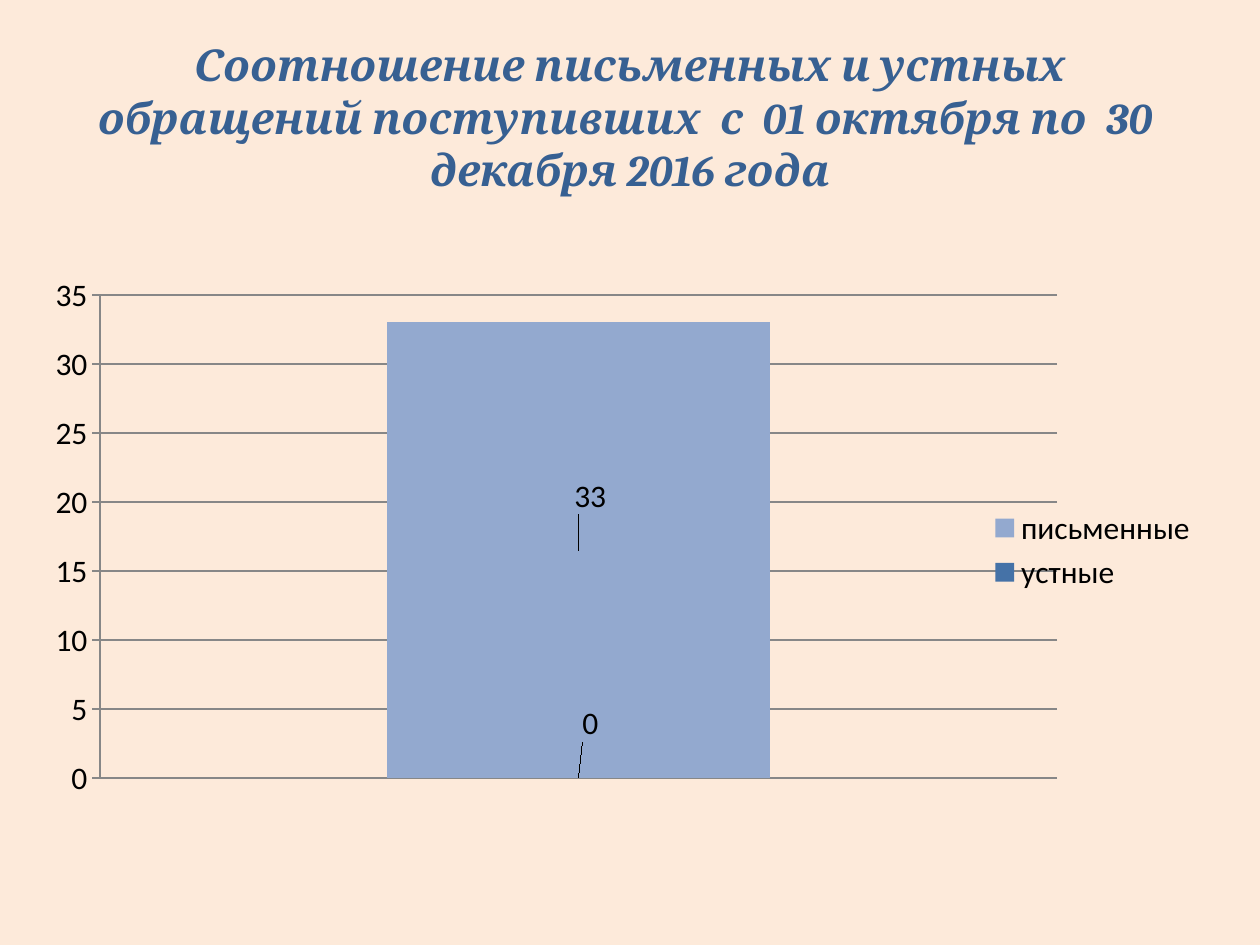
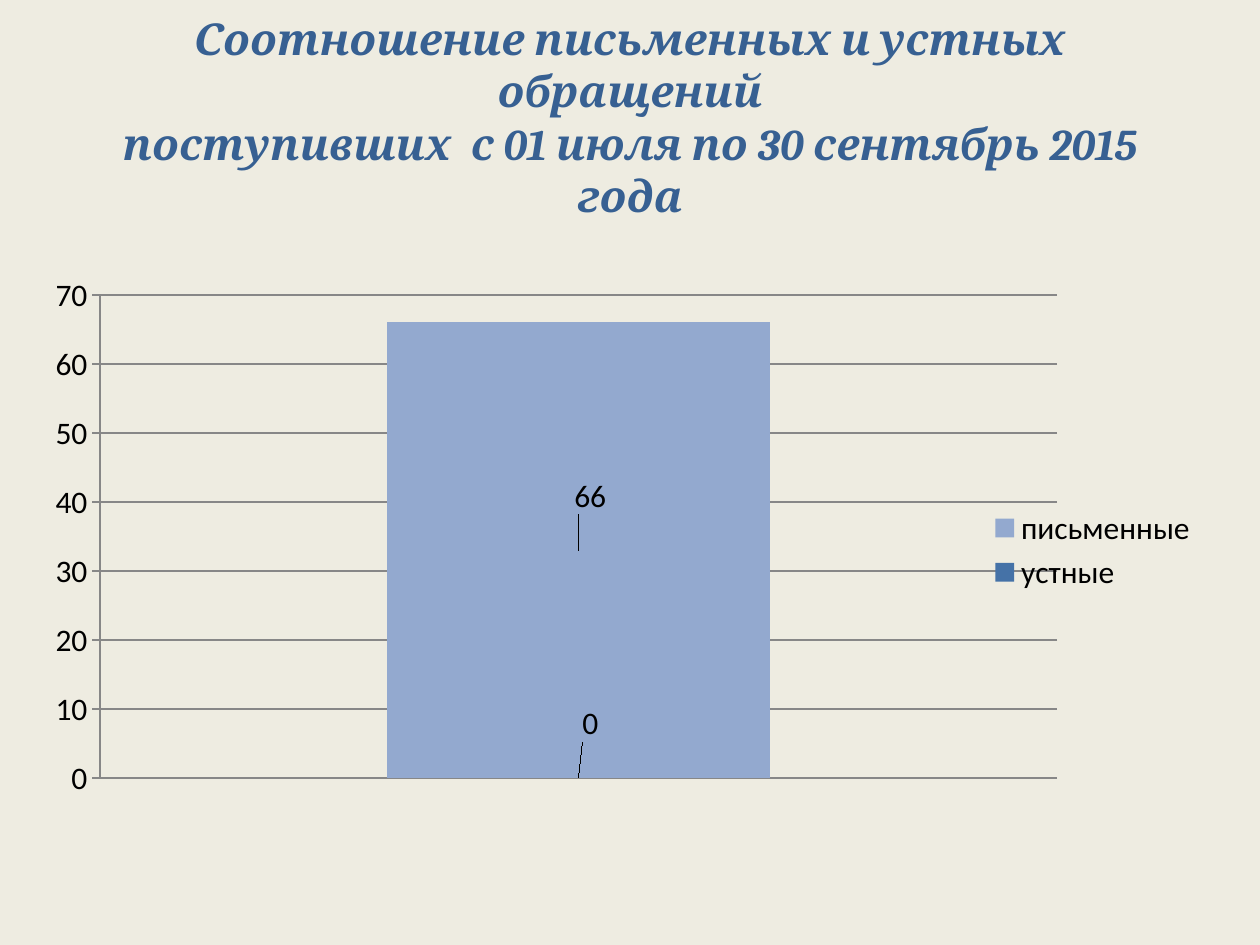
from lxml.etree import SubElement
from pptx import Presentation
from pptx.chart.data import CategoryChartData
from pptx.dml.color import RGBColor
from pptx.enum.chart import XL_CHART_TYPE, XL_LABEL_POSITION, XL_LEGEND_POSITION, XL_TICK_MARK
from pptx.enum.text import MSO_ANCHOR, PP_ALIGN
from pptx.oxml.ns import qn
from pptx.util import Pt

COLORS = {
    "peach": "FDEADA",
    "cream": "EEECE1",
    "title": "376092",
    "text": "000000",
    "grid": "878787",
    "oral": "4572A7",
    "written": "93A9CF",
}
TITLE_BOX = [Pt(v) for v in (36, 21.6, 648, 90)]
CHART_BOX = [Pt(v) for v in (16.56, 157.68, 675.36, 311.76)]
PLOT_LAYOUT = {"layoutTarget": "inner", "xMode": "edge", "yMode": "edge",
               "x": 0.06, "y": 0.03, "w": 0.81, "h": 0.89}
# Series name, colour, label offset as a share of the chart size
SERIES = [
    ("устные", "oral", (0.01, -0.1)),
    ("письменные", "written", (0.01, -0.1)),
]
SLIDES = [
    ("peach",
     "Соотношение письменных и устных обращений поступивших  с  01 октября по  30  декабря 2016 года",
     (0, 33), 35, 5),
    ("cream",
     "Соотношение письменных и устных обращений\vпоступивших  с 01 июля по 30 сентябрь 2015 года",
     (0, 66), 70, 10),
]


def rgb(name):
    return RGBColor.from_string(COLORS[name])


def fill_layout(layout, values):
    """Write a manual chart layout from a dict of setting names and values."""
    manual = SubElement(layout, qn("c:manualLayout"))
    for tag, value in values.items():
        SubElement(manual, qn(f"c:{tag}")).set("val", str(value))


class Deck:
    def __init__(self):
        self.prs = Presentation()
        self.prs.slide_width, self.prs.slide_height = Pt(720), Pt(540)
        self.slide = None

    def add_slide(self, background):
        self.slide = self.prs.slides.add_slide(self.prs.slide_layouts[5])
        fill = self.slide.background.fill
        fill.solid()
        fill.fore_color.rgb = rgb(background)

    def title(self, text):
        sp = self.slide.shapes.title
        sp.left, sp.top, sp.width, sp.height = TITLE_BOX
        tf = sp.text_frame
        tf.vertical_anchor = MSO_ANCHOR.MIDDLE
        p = tf.paragraphs[0]
        p.text = text
        p.alignment = PP_ALIGN.CENTER
        p.font.name, p.font.size = "Cambria", Pt(25)
        p.font.bold = p.font.italic = True
        p.font.color.rgb = rgb("title")

    def stacked_chart(self, values, maximum, step):
        data = CategoryChartData()
        data.categories = ["1"]
        for (name, _, _), value in zip(SERIES, values):
            data.add_series(name, [value])
        chart = self.slide.shapes.add_chart(
            XL_CHART_TYPE.COLUMN_STACKED, *CHART_BOX, data).chart
        chart.has_title = False
        chart.font.name, chart.font.size = "Calibri", Pt(18)
        chart.font.color.rgb = rgb("text")
        chart.has_legend = True
        chart.legend.position = XL_LEGEND_POSITION.RIGHT
        chart.legend.include_in_layout = False
        self.axes(chart, maximum, step)

        plot = chart.plots[0]
        plot.gap_width, plot.overlap, plot.vary_by_categories = 150, 100, False
        for series, (_, color, offset) in zip(plot.series, SERIES):
            series.format.fill.solid()
            series.format.fill.fore_color.rgb = rgb(color)
            self.value_label(series, offset)

        area = chart.element.find(".//" + qn("c:plotArea"))
        layout = area.find(qn("c:layout"))
        if layout is None:
            layout = SubElement(area, qn("c:layout"))
            area.insert(0, layout)
        fill_layout(layout, PLOT_LAYOUT)

    def axes(self, chart, maximum, step):
        chart.category_axis.visible = False
        axis = chart.value_axis
        axis.minimum_scale, axis.maximum_scale, axis.major_unit = 0, maximum, step
        axis.major_tick_mark = XL_TICK_MARK.OUTSIDE
        axis.minor_tick_mark = XL_TICK_MARK.NONE
        axis.has_major_gridlines = True
        for line in (axis.format.line, axis.major_gridlines.format.line):
            line.color.rgb = rgb("grid")
            line.width = Pt(0.75)

    def value_label(self, series, offset):
        """Show the value of the only point, moved from the bar's centre."""
        series.points[0].data_label.position = XL_LABEL_POSITION.CENTER
        label = series.data_labels._element.find(qn("c:dLbl"))
        layout = SubElement(label, qn("c:layout"))
        label.insert(1, layout)
        fill_layout(layout, dict(zip("xy", offset)))


def main():
    deck = Deck()
    for background, title, values, maximum, step in SLIDES:
        deck.add_slide(background)
        deck.title(title)
        deck.stacked_chart(values, maximum, step)
    deck.prs.save("out.pptx")


if __name__ == "__main__":
    main()
